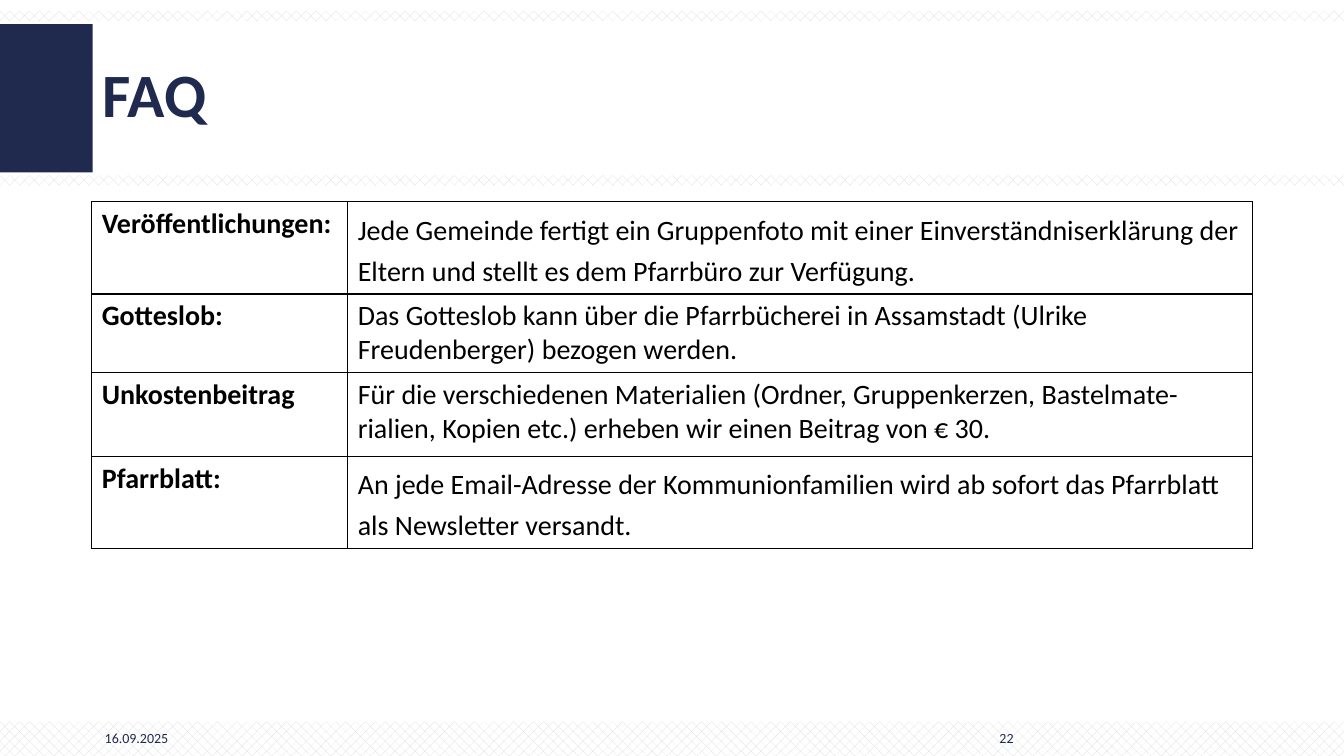
from lxml import etree
from pptx import Presentation
from pptx import util as u
from pptx.dml.color import RGBColor
from pptx.enum import dml, shapes, text
from pptx.oxml.ns import qn

NAVY = RGBColor(0x20, 0x2A, 0x4F)
GREY = RGBColor(0xD9, 0xD9, 0xD9)
WHITE = RGBColor(0xFF, 0xFF, 0xFF)
BLACK = RGBColor(0x00, 0x00, 0x00)

ANSWERS = [
    ("Veröffentlichungen:",
     "Jede Gemeinde fertigt ein Gruppenfoto mit einer Einverständniserklärung der "
     "Eltern und stellt es dem Pfarrbüro zur Verfügung.", 3.56, True),
    ("Gotteslob:",
     "Das Gotteslob kann über die Pfarrbücherei in Assamstadt (Ulrike "
     "Freudenberger) bezogen werden.", 2.8, False),
    ("Unkostenbeitrag",
     "Für die verschiedenen Materialien (Ordner, Gruppenkerzen, Bastelmate-"
     "rialien, Kopien etc.) erheben wir einen Beitrag von € 30.", 3.32, False),
    ("Pfarrblatt:",
     "An jede Email-Adresse der Kommunionfamilien wird ab sofort das Pfarrblatt "
     "als Newsletter versandt.", 3.16, True),
]


class FaqSlide:
    """Draws styled elements on one slide with a grid of 40 columns by 30 rows."""

    font_name = "Calibri"

    def __init__(self, presentation):
        self.column = presentation.slide_width / 40
        self.row = presentation.slide_height / 30
        self.slide = presentation.slides.add_slide(presentation.slide_layouts[5])

    def box(self, left, top, width, height):
        return (round(left * self.column), round(top * self.row),
                round(width * self.column), round(height * self.row))

    def set_text(self, frame, content, size, color, bold=False,
                 align=text.PP_ALIGN.LEFT, spacing=None):
        frame.text = content
        frame.word_wrap = True
        paragraph = frame.paragraphs[0]
        paragraph.alignment = align
        paragraph.line_spacing = spacing
        font = paragraph.runs[0].font
        font.name, font.size, font.bold = self.font_name, u.Pt(size), bold
        font.color.rgb = color
        return paragraph

    def rectangle(self, *place):
        shape = self.slide.shapes.add_shape(
            shapes.MSO_SHAPE.RECTANGLE, *self.box(*place))
        shape.shadow.inherit = False
        shape.line.fill.background()
        return shape

    def block(self, *place):
        fill = self.rectangle(*place).fill
        fill.solid()
        fill.fore_color.rgb = NAVY

    def band(self, *place):
        fill = self.rectangle(*place).fill
        fill.patterned()
        fill.pattern = dml.MSO_PATTERN.PERCENT_30
        fill.fore_color.rgb, fill.back_color.rgb = GREY, WHITE

    def title(self, content, *place):
        shape = self.slide.shapes.title
        shape.left, shape.top, shape.width, shape.height = self.box(*place)
        frame = shape.text_frame
        self.set_text(frame, content, 44, NAVY, bold=True, spacing=0.9)
        frame.auto_size = text.MSO_AUTO_SIZE.NONE
        frame.vertical_anchor = text.MSO_ANCHOR.MIDDLE

    def label(self, content, *place, align=text.PP_ALIGN.LEFT):
        shape = self.slide.shapes.add_textbox(*self.box(*place))
        self.set_text(shape.text_frame, content, 10, NAVY, align=align)

    def border(self, cell):
        properties = cell._tc.get_or_add_tcPr()
        for position, side in enumerate(("a:lnL", "a:lnR", "a:lnT", "a:lnB")):
            line = etree.Element(qn(side), w=str(u.Pt(1)))
            fill = etree.SubElement(line, qn("a:solidFill"))
            etree.SubElement(fill, qn("a:srgbClr"), val=str(BLACK))
            properties.insert(position, line)

    def table(self, answers, left, top, widths):
        heights = [height for _, _, height, _ in answers]
        table = self.slide.shapes.add_table(
            len(answers), len(widths),
            *self.box(left, top, sum(widths), sum(heights))).table
        table.first_row = table.horz_banding = False
        for column, width in zip(table.columns, widths):
            column.width = round(width * self.column)
        for row, (topic, answer, height, loose) in zip(table.rows, answers):
            row.height = round(height * self.row)
            topic_cell, answer_cell = row.cells
            self.set_text(topic_cell.text_frame, topic, 20, BLACK, bold=True)
            paragraph = self.set_text(answer_cell.text_frame, answer, 20, BLACK)
            if loose:
                paragraph.line_spacing = 1.2
            for cell in row.cells:
                cell.fill.background()
                self.border(cell)


def main():
    presentation = Presentation()
    presentation.slide_width = u.Inches(13.33)
    presentation.slide_height = u.Inches(7.5)
    faq = FaqSlide(presentation)
    for top, height in ((28.64, 1.44), (6.96, 0.4), (0.44, 0.4)):
        faq.band(0, top, 40, height)
    faq.block(0, 0.96, 2.76, 5.88)
    faq.title("FAQ", 2.76, 0.96, 31.18, 5.8)
    faq.table(ANSWERS, 2.73, 8, (7.62, 26.92))
    faq.label("16.09.2025", 2.82, 28.76, 2.94, 1.24)
    faq.label("22", 28.75, 28.76, 1.71, 1.24, align=text.PP_ALIGN.RIGHT)
    presentation.save("out.pptx")


if __name__ == "__main__":
    main()
